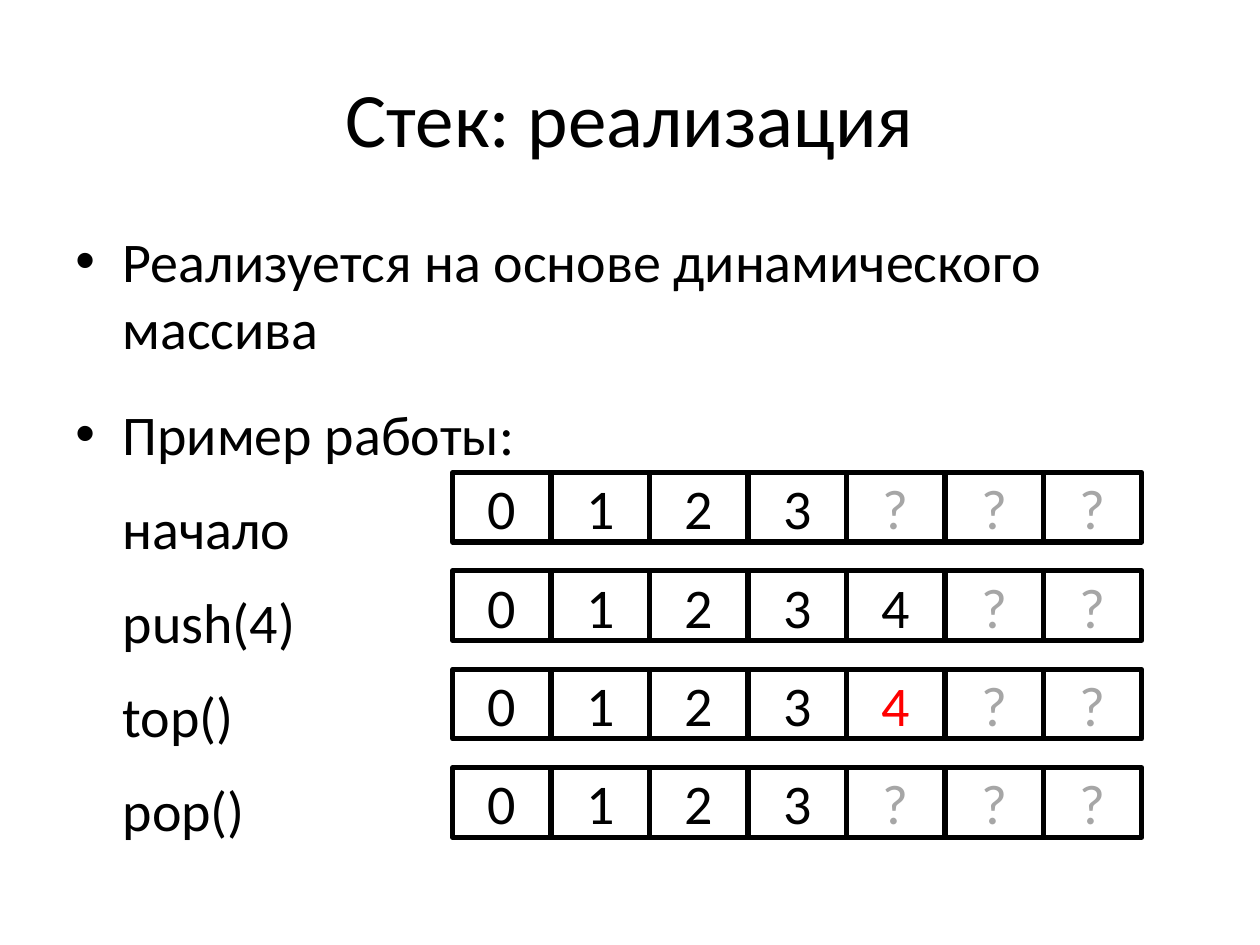
from lxml import etree
from pptx import Presentation
from pptx.dml.color import RGBColor
from pptx.enum.shapes import MSO_SHAPE
from pptx.enum.text import MSO_ANCHOR, PP_ALIGN
from pptx.oxml.ns import qn
from pptx.util import Pt

PX = 9525  # 96 px to the inch
RECT = MSO_SHAPE.RECTANGLE
MIDDLE = MSO_ANCHOR.MIDDLE
CENTER = PP_ALIGN.CENTER
COLORS = {"ink": "000000", "free": "A6A6A6", "top": "FF0000"}


def style(para, size, color="ink"):
    for run in para.runs:
        run.font.name = "Calibri"
        run.font.size = Pt(size)
        run.font.color.rgb = RGBColor.from_string(COLORS[color])


def add_box(left, top, width, height):
    box = slide.shapes.add_textbox(left * PX, top * PX, width * PX, height * PX)
    box.text_frame.word_wrap = True
    return box.text_frame


deck = Presentation()
deck.slide_width = 960 * PX
deck.slide_height = 720 * PX
slide = deck.slides.add_slide(deck.slide_layouts[6])

# Title
frame = add_box(48, 29, 864, 120)
frame.vertical_anchor = MIDDLE
frame.text = "Стек: реализация"
frame.paragraphs[0].alignment = CENTER
style(frame.paragraphs[0], 44)

# Bullets, the second one followed by the names of the steps
steps = ["начало", "push(4)", "top()", "pop()"]
frame = add_box(48, 168, 864, 475)
intro = frame.paragraphs[0]
intro.text = "Реализуется на основе динамического массива"
example = frame.add_paragraph()
example.text = "\v".join(["Пример работы:"] + steps)
example.line_spacing = 1.4
example.space_after = Pt(6)
for para in (intro, example):
    para.space_before = Pt(6.4)
    style(para, 32)
    props = para._p.get_or_add_pPr()
    props.set("marL", str(36 * PX))
    props.set("indent", str(-36 * PX))
    etree.SubElement(props, qn("a:buFont")).set("typeface", "Arial")
    etree.SubElement(props, qn("a:buChar")).set("char", "•")

# Array after each step
rows = ["0123???", "01234??", "01234??", "0123???"]
pitch = 75
for row, values in enumerate(rows):
    for col, value in enumerate(values):
        cell = slide.shapes.add_shape(
            RECT, (345 + col * pitch) * PX, (360 + row * pitch) * PX,
            pitch * PX, 53 * PX)
        cell.shadow.inherit = False
        cell.fill.background()
        cell.line.color.rgb = RGBColor.from_string(COLORS["ink"])
        cell.line.width = Pt(3)
        cell.text_frame.text = value
        cell.text_frame.vertical_anchor = MIDDLE
        para = cell.text_frame.paragraphs[0]
        para.alignment = CENTER
        if value == "?":
            color = "free"
        elif steps[row] == "top()" and value == "4":
            color = "top"
        else:
            color = "ink"
        style(para, 32, color)

deck.save("out.pptx")
